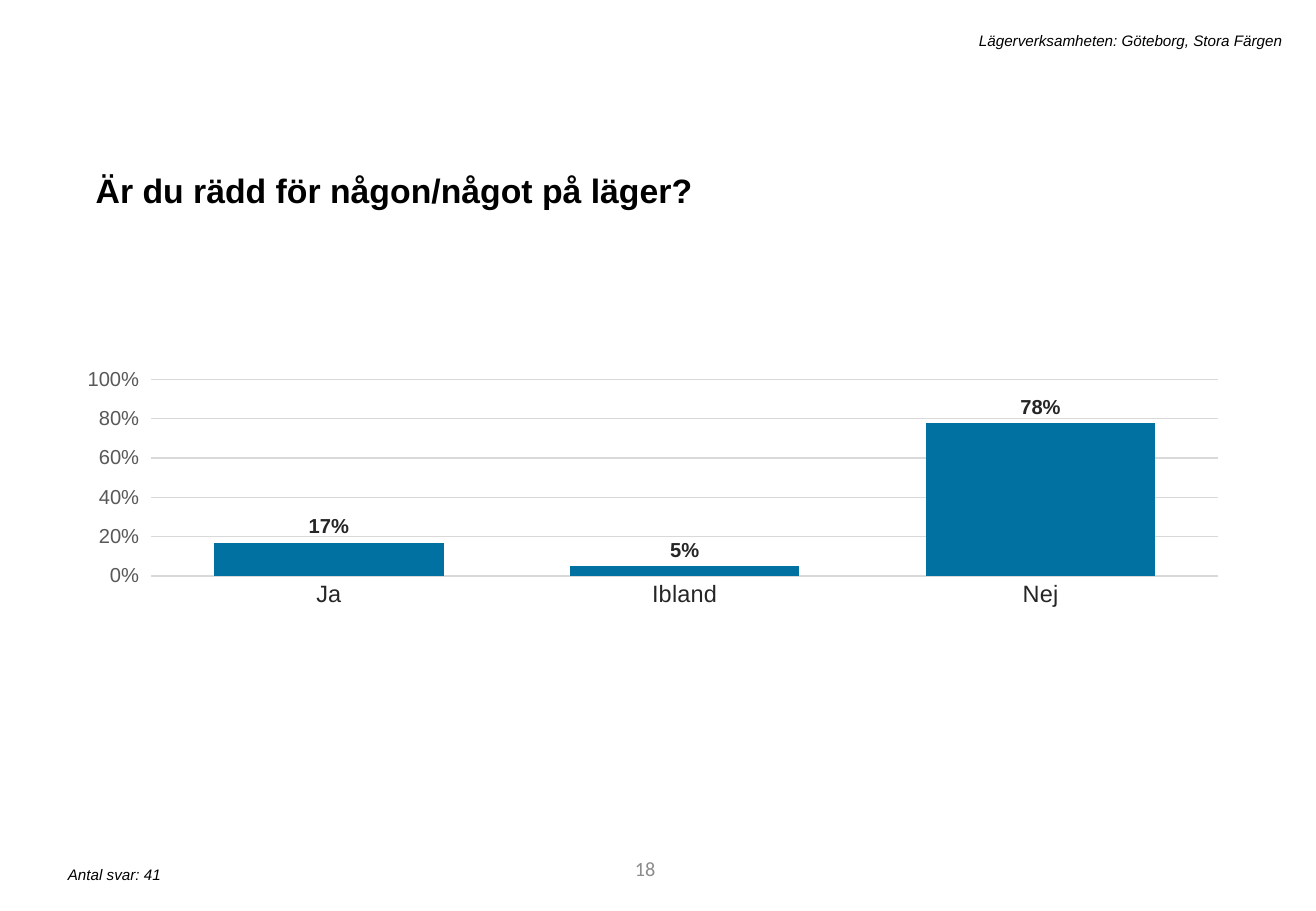
"""Build a survey slide with one question and a column chart of its answers."""
from lxml.etree import SubElement
from pptx import Presentation
from pptx.chart.data import CategoryChartData
from pptx.dml.color import RGBColor as Rgb
from pptx.enum.chart import XL_CHART_TYPE as ChartType
from pptx.enum.chart import XL_LABEL_POSITION as LabelPos
from pptx.enum.chart import XL_TICK_MARK as Tick
from pptx.enum.text import MSO_ANCHOR as Anchor
from pptx.enum.text import MSO_AUTO_SIZE as AutoSize
from pptx.enum.text import PP_ALIGN as Align
from pptx.oxml.ns import qn
from pptx.util import Cm, Pt

COLORS = {
    "text": "000000",
    "number": "8C8C8C",
    "bar": "0071A1",
    "grid": "D9D9D9",
    "label": "262626",
    "scale": "595959",
}


class SurveySlide:
    """Holds the style and the current slide."""

    def __init__(self, deck, font="Arial"):
        self.slide = deck.slides.add_slide(deck.slide_layouts[6])
        self.font = font

    def color(self, name):
        return Rgb.from_string(COLORS[name])

    def apply(self, target, values):
        for attribute, value in values.items():
            setattr(target, attribute, value)

    def style(self, font, size, color="text", **values):
        self.apply(font, {"name": self.font, "size": Pt(size), "bold": False, **values})
        font.color.rgb = self.color(color)

    def line(self, line):
        line.color.rgb = self.color("grid")
        line.width = Pt(0.75)

    def text(self, wording, box, size, paragraph=None, frame=None, **font):
        area = self.slide.shapes.add_textbox(*map(Cm, box)).text_frame
        self.apply(area, {"word_wrap": True, "auto_size": AutoSize.SHAPE_TO_FIT_TEXT, **(frame or {})})
        line = area.paragraphs[0]
        self.apply(line, paragraph or {})
        run = line.add_run()
        run.text = wording
        self.style(run.font, size, **font)

    def column_chart(self, answers, box, plot_area):
        data = CategoryChartData(number_format="0%")
        data.categories = list(answers)
        data.add_series("Series 1", list(answers.values()))
        chart = self.slide.shapes.add_chart(
            ChartType.COLUMN_CLUSTERED, *map(Cm, box), data
        ).chart
        self.apply(chart, {"has_legend": False, "has_title": False})
        self.style(chart.font, 10)
        self.axes(chart)
        self.bars(chart.plots[0])
        self.place_plot(chart, plot_area)

    def axes(self, chart):
        answer_axis, share_axis = chart.category_axis, chart.value_axis
        self.apply(answer_axis, {"major_tick_mark": Tick.NONE, "has_major_gridlines": False})
        self.style(answer_axis.tick_labels.font, 14, "label")
        self.line(answer_axis.format.line)
        self.apply(share_axis, {
            "minimum_scale": 0,
            "maximum_scale": 1,
            "major_unit": 0.2,
            "major_tick_mark": Tick.OUTSIDE,
            "has_major_gridlines": True,
        })
        self.apply(share_axis.tick_labels, {"number_format": "0%", "number_format_is_linked": False})
        self.style(share_axis.tick_labels.font, 12, "scale")
        self.line(share_axis.major_gridlines.format.line)
        share_axis.format.line.fill.background()

    def bars(self, plot):
        self.apply(plot, {"gap_width": 55, "vary_by_categories": False, "has_data_labels": True})
        fill = plot.series[0].format.fill
        fill.solid()
        fill.fore_color.rgb = self.color("bar")
        labels = plot.data_labels
        self.apply(labels, {
            "show_value": True,
            "position": LabelPos.OUTSIDE_END,
            "number_format": "0%",
            "number_format_is_linked": False,
        })
        self.style(labels.font, 12, "label", bold=True)

    def place_plot(self, chart, plot_area):
        area = chart.element.find(f".//{qn('c:plotArea')}")
        for old_layout in area.findall(qn("c:layout")):
            area.remove(old_layout)
        layout = SubElement(area, qn("c:layout"))
        area.insert(0, layout)
        manual = SubElement(layout, qn("c:manualLayout"))
        settings = {"layoutTarget": "inner", "xMode": "edge", "yMode": "edge", **plot_area}
        for tag, value in settings.items():
            SubElement(manual, qn(f"c:{tag}")).set("val", str(value))


def main():
    deck = Presentation()
    deck.slide_width, deck.slide_height = Cm(27.51), Cm(19.05)
    survey = SurveySlide(deck)
    survey.text(
        "18", (7.75, 17.65, 6.2, 1.02), 12,
        paragraph={"alignment": Align.RIGHT},
        frame={"vertical_anchor": Anchor.MIDDLE, "auto_size": AutoSize.NONE},
        name="Calibri", color="number",
    )
    survey.text(
        "Är du rädd för någon/något på läger?", (1.75, 3.25, 23.88, 1.19), 20,
        paragraph={"line_spacing": 1.2, "space_before": Pt(10)}, bold=True,
    )
    survey.text("Antal svar: 41", (1.17, 17.98, 11.2, 0.64), 9, italic=True)
    survey.column_chart(
        {"Ja": 0.17, "Ibland": 0.05, "Nej": 0.78},
        (1.83, 6.43, 23.88, 10.03),
        {"x": 0.05, "y": 0.15, "w": 0.94, "h": 0.41},
    )
    survey.text(
        "Lägerverksamheten: Göteborg, Stora Färgen", (4.55, 0.53, 22.5, 0.64), 9,
        paragraph={"alignment": Align.RIGHT}, italic=True,
    )
    deck.save("out.pptx")


if __name__ == "__main__":
    main()
